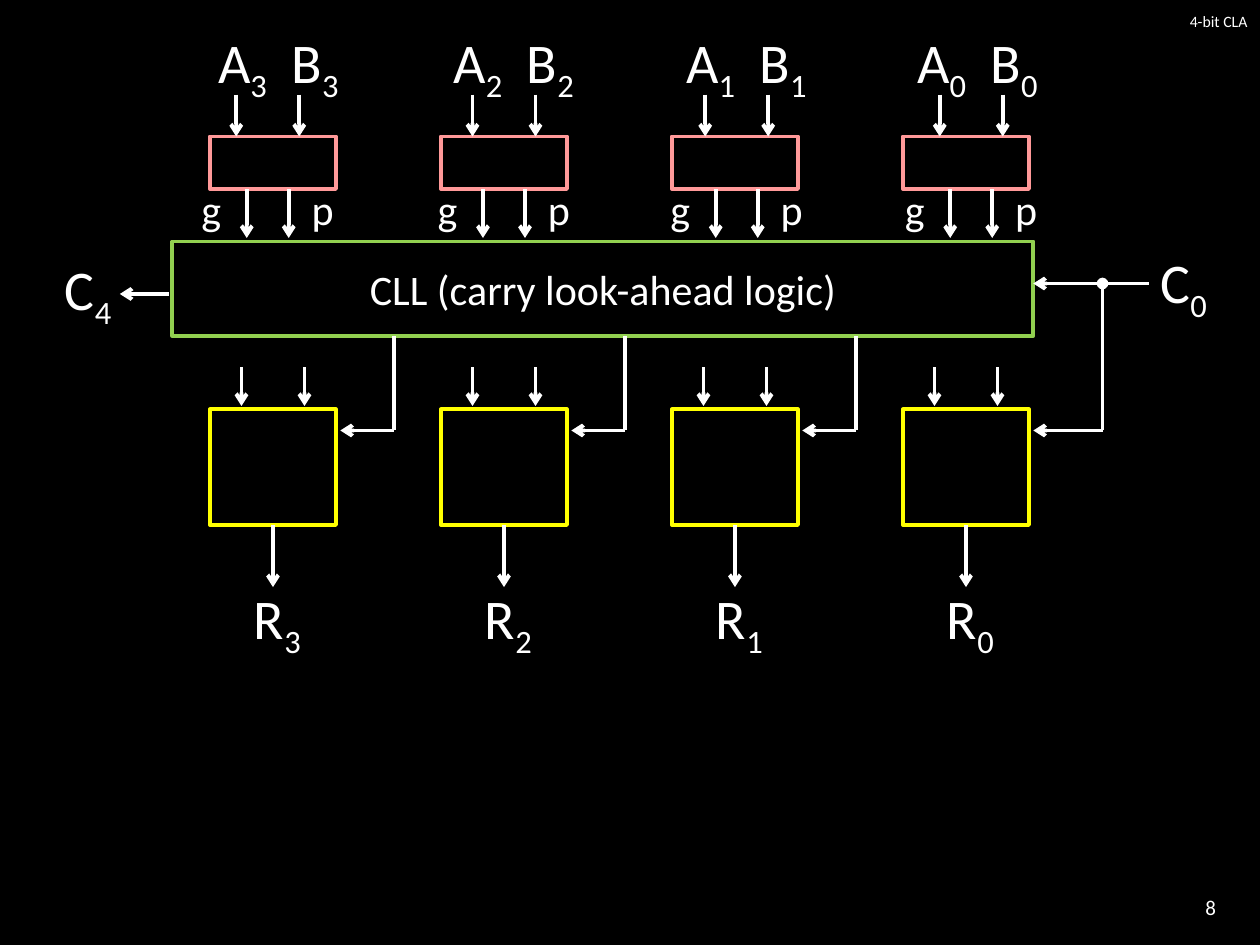
from dataclasses import dataclass

from pptx import Presentation
from pptx.dml.color import RGBColor
from pptx.enum.shapes import MSO_CONNECTOR, MSO_SHAPE
from pptx.enum.text import MSO_ANCHOR, MSO_AUTO_SIZE, PP_ALIGN
from pptx.oxml.ns import qn
from pptx.util import Pt

RECTANGLE = MSO_SHAPE.RECTANGLE
STRAIGHT = MSO_CONNECTOR.STRAIGHT
MIDDLE = MSO_ANCHOR.MIDDLE
FIT_SHAPE = MSO_AUTO_SIZE.SHAPE_TO_FIT_TEXT
LEFT, CENTER, RIGHT = PP_ALIGN.LEFT, PP_ALIGN.CENTER, PP_ALIGN.RIGHT
BOTTOM_SITE = 2


@dataclass(frozen=True)
class Theme:
    font: str = "Calibri"
    background: RGBColor = RGBColor(0x00, 0x00, 0x00)
    ink: RGBColor = RGBColor(0xFF, 0xFF, 0xFF)
    generator: RGBColor = RGBColor(0xFF, 0x99, 0x99)
    lookahead: RGBColor = RGBColor(0x92, 0xD0, 0x50)
    adder: RGBColor = RGBColor(0xFF, 0xFF, 0x00)
    line: float = 2.25
    title_size: int = 9
    number_size: int = 12
    label_size: int = 24
    signal_size: int = 32


THEME = Theme()

BLOCK_LEFT, BLOCK_PITCH, BLOCK_WIDTH = 120, 132, 72
CLL_LEFT, CLL_TOP, CLL_WIDTH, CLL_HEIGHT = 98.5, 138, 492, 54
CARRY_Y = 246
C0_Y, C0_BRANCH_X, CARRY_IN_X = 162, 630, 590.5

# bit: (x of the A operand's arrow, left of the A operand's label)
OPERANDS = {3: (135, 117.5), 2: (270, 252), 1: (403, 385), 0: (537, 517)}


def style_text(paragraph, size, align=LEFT):
    paragraph.alignment = align
    font = paragraph.font
    font.name = THEME.font
    font.size = Pt(size)
    font.color.rgb = THEME.ink


def add_label(slide, text, left, top, width, height, size, subscript=None):
    """Add an unwrapped label, with an optional subscript after its text."""
    label = slide.shapes.add_textbox(Pt(left), Pt(top), Pt(width), Pt(height))
    frame = label.text_frame
    frame.word_wrap = False
    frame.auto_size = FIT_SHAPE
    paragraph = frame.paragraphs[0]
    style_text(paragraph, size)
    paragraph.add_run().text = text
    if subscript is not None:
        index = paragraph.add_run()
        index.text = str(subscript)
        index.font._element.set("baseline", "-25000")
    return label


def add_signal(slide, name, bit, left, top):
    add_label(slide, name, left, top, 43, 46, THEME.signal_size, bit)


def add_block(slide, left, top, width, height, color):
    block = slide.shapes.add_shape(RECTANGLE, Pt(left), Pt(top), Pt(width), Pt(height))
    block.shadow.inherit = False
    block.fill.background()
    block.line.color.rgb = color
    block.line.width = Pt(THEME.line)
    return block


def add_wire(slide, start, end, head=None, tail="arrow"):
    """Draw a line between two points; head marks its start, tail its end."""
    wire = slide.shapes.add_connector(STRAIGHT, *(Pt(v) for v in (*start, *end)))
    wire.line.color.rgb = THEME.ink
    wire.line.width = Pt(THEME.line)
    properties = wire._element.spPr
    outline = properties.find(qn("a:ln"))
    for tag, kind in (("a:headEnd", head), ("a:tailEnd", tail)):
        if kind:
            outline.makeelement(qn(tag), {})
            mark = outline.makeelement(qn(tag), {"type": kind})
            outline.append(mark)
    properties.append(properties.makeelement(qn("a:effectLst"), {}))
    return wire


def add_title(slide, text):
    title = slide.shapes.title
    title.left, title.top, title.width, title.height = Pt(444), Pt(0), Pt(276), Pt(24)
    title.text_frame.text = text
    title.text_frame.vertical_anchor = MIDDLE
    style_text(title.text_frame.paragraphs[0], THEME.title_size, RIGHT)


def add_page_number(slide, number):
    box = slide.shapes.add_textbox(Pt(642), Pt(504), Pt(60), Pt(29))
    box.text_frame.word_wrap = True
    box.text_frame.text = str(number)
    box.text_frame.vertical_anchor = MIDDLE
    style_text(box.text_frame.paragraphs[0], THEME.number_size, RIGHT)


def add_lookahead(slide):
    cll = add_block(slide, CLL_LEFT, CLL_TOP, CLL_WIDTH, CLL_HEIGHT, THEME.lookahead)
    cll.text_frame.word_wrap = False
    cll.text_frame.text = "CLL (carry look-ahead logic)"
    cll.text_frame.vertical_anchor = MIDDLE
    style_text(cll.text_frame.paragraphs[0], THEME.label_size, CENTER)
    add_wire(slide, (96.5, 168), (68.5, 168))
    add_signal(slide, "C", 4, 30, 142)


def add_generator(slide, bit, left):
    """Add the block that turns a bit's operands into g and p."""
    arrow_x, label_left = OPERANDS[bit]
    add_block(slide, left, 78, BLOCK_WIDTH, 30, THEME.generator)
    for i, operand in enumerate("AB"):
        add_signal(slide, operand, bit, label_left + 42 * i, 12)
        add_wire(slide, (arrow_x + 36 * i, 54), (arrow_x + 36 * i, 78))
    for name, label_offset, wire_offset in (("g", -27, 6), ("p", 36, 30)):
        add_label(slide, name, arrow_x + label_offset, 101.5, 26, 36, THEME.label_size)
        wire_x = arrow_x + wire_offset
        add_wire(slide, (wire_x, 108), (wire_x, 136))


def add_adder(slide, bit, left):
    adder = add_block(slide, left, 234, BLOCK_WIDTH, 66, THEME.adder)
    for offset in (18, 54):
        add_wire(slide, (left + offset, 210), (left + offset, 232))
    center = left + BLOCK_WIDTH / 2
    result = add_wire(slide, (center, 300), (center, 335.5))
    result.begin_connect(adder, BOTTOM_SITE)
    add_signal(slide, "R", bit, left + 18, 330)


def add_carry(slide, left):
    """Lead a carry from the look-ahead logic into the adder at left."""
    corner = (left + 105, CARRY_Y)
    add_wire(slide, corner, (left + 74.5, CARRY_Y))
    add_wire(slide, corner, (left + 105, CLL_TOP + CLL_HEIGHT), tail=None)


def add_carry_in(slide):
    corner = (C0_BRANCH_X, CARRY_Y)
    add_wire(slide, corner, (CARRY_IN_X, CARRY_Y))
    add_wire(slide, (C0_BRANCH_X, C0_Y), corner, head="oval", tail=None)
    add_wire(slide, (656.5, C0_Y), (CARRY_IN_X, C0_Y))
    add_signal(slide, "C", 0, 656, 138)


def main():
    deck = Presentation()
    deck.slide_width, deck.slide_height = Pt(720), Pt(540)
    slide = deck.slides.add_slide(deck.slide_layouts[5])
    slide.background.fill.solid()
    slide.background.fill.fore_color.rgb = THEME.background

    add_title(slide, "4-bit CLA")
    add_page_number(slide, 8)
    add_lookahead(slide)
    for column, bit in enumerate(OPERANDS):
        left = BLOCK_LEFT + BLOCK_PITCH * column
        add_generator(slide, bit, left)
        add_adder(slide, bit, left)
        if bit > 0:
            add_carry(slide, left)
    add_carry_in(slide)
    deck.save("out.pptx")


if __name__ == "__main__":
    main()
